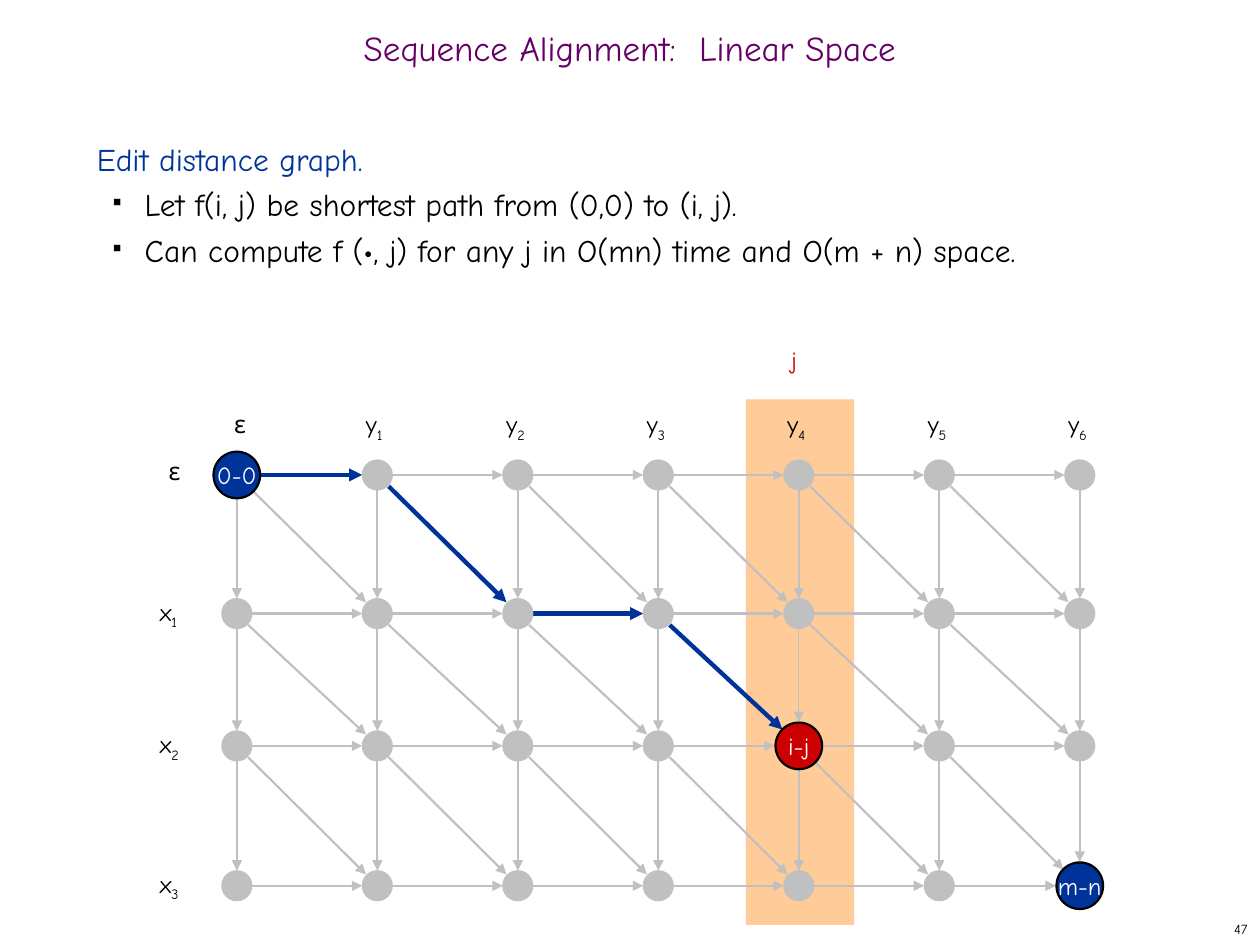
from lxml import etree
from pptx import Presentation
from pptx.dml.color import RGBColor
from pptx.enum import shapes, text
from pptx.oxml import ns
from pptx.util import Inches, Pt

COLORS = {"blue": "003399", "red": "CC0000", "gray": "C0C0C0", "band": "FFCC99",
          "purple": "660066", "black": "000000", "white": "FFFFFF"}
FONT = "Comic Neue"


def style(paragraph, size, color, alignment=text.PP_ALIGN.LEFT):
    paragraph.alignment = alignment
    paragraph.font.name = FONT
    paragraph.font.size = Pt(size)
    paragraph.font.color.rgb = RGBColor.from_string(COLORS[color])


def add_label(left, top, width, height, content, color="black", subscript=""):
    box = slide.shapes.add_textbox(Inches(left), Inches(top), Inches(width), Inches(height))
    box.text_frame.word_wrap = True
    paragraph = box.text_frame.paragraphs[0]
    paragraph.add_run().text = content
    if subscript:
        run = paragraph.add_run()
        run.text = subscript
        run.font._element.set("baseline", "-25000")
    style(paragraph, 14, color)


presentation = Presentation()
presentation.slide_width, presentation.slide_height = Inches(10), Inches(7.5)
slide = presentation.slides.add_slide(presentation.slide_layouts[5])

# Title
title = slide.shapes.title
title.left, title.top, title.width, title.height = Inches(0), Inches(0.17), Inches(10), Inches(0.5)
title.text_frame.text = "Sequence Alignment:  Linear Space"
title.text_frame.auto_size = text.MSO_AUTO_SIZE.NONE
title.text_frame.vertical_anchor = text.MSO_ANCHOR.MIDDLE
title.text_frame.paragraphs[0].line_spacing = 0.7
style(title.text_frame.paragraphs[0], 20, "purple", text.PP_ALIGN.CENTER)

# Highlighted column j
band = slide.shapes.add_shape(shapes.MSO_SHAPE.RECTANGLE, Inches(5.92), Inches(3.17),
                              Inches(0.86), Inches(4.17))
band.shadow.inherit = False
band.fill.solid()
band.fill.fore_color.rgb = RGBColor.from_string(COLORS["band"])
band.line.fill.background()

# Heading and bullets
body = slide.shapes.add_textbox(Inches(0.67), Inches(1), Inches(8.58), Inches(1.3))
body.text_frame.word_wrap = True
body.text_frame.text = ("Edit distance graph.\n"
                        "Let f(i, j) be shortest path from (0,0) to (i, j).\n"
                        "Can compute f (•, j) for any j in O(mn) time and O(m + n) space.")
for index, paragraph in enumerate(body.text_frame.paragraphs):
    if index > 0:
        paragraph.level = 1
        properties = paragraph._p.get_or_add_pPr()
        properties.set("marL", str(Inches(0.38)))
        properties.set("indent", str(Inches(-0.25)))
        bullet_color = etree.SubElement(properties, ns.qn("a:buClr"))
        etree.SubElement(bullet_color, ns.qn("a:srgbClr"), val=COLORS["black"])
        etree.SubElement(properties, ns.qn("a:buSzPct"), val="35000")
        etree.SubElement(properties, ns.qn("a:buChar"), char="■")
    paragraph.line_spacing = Pt(26)
    style(paragraph, 18, "black" if index else "blue")

# Grid of the graph: nodes are (row, column)
column_x = [1.88 + 1.115 * column for column in range(7)]
row_y = [3.77, 4.87, 5.92, 7.03]
nodes = [(row, column) for row in range(4) for column in range(7)]
named_nodes = {(0, 0): ("0-0", "blue"), (2, 4): ("i-j", "red"), (3, 6): ("m-n", "blue")}
shortest_path = [(0, 0), (0, 1), (1, 2), (1, 3), (2, 4)]
path_edges = list(zip(shortest_path, shortest_path[1:]))
thin_edges = [((2, 3), (2, 4)), ((1, 4), (2, 4))]

# Edges: right, down and diagonal from each node
for row, column in nodes:
    for down, right in ((0, 1), (1, 0), (1, 1)):
        start, end = (row, column), (row + down, column + right)
        if end not in nodes:
            continue
        small, large = (0.09, 0.13) if down and right else (0.12, 0.19)
        start_gap = large if start in named_nodes else small
        end_gap = large if end in named_nodes else small
        edge = slide.shapes.add_connector(
            shapes.MSO_CONNECTOR.STRAIGHT,
            Inches(column_x[column] + right * start_gap),
            Inches(row_y[row] + down * start_gap),
            Inches(column_x[end[1]] - right * end_gap),
            Inches(row_y[end[0]] - down * end_gap))
        on_path = (start, end) in path_edges
        edge.line.color.rgb = RGBColor.from_string(COLORS["blue" if on_path else "gray"])
        edge.line.width = Pt(2.5 if on_path else 0.75 if (start, end) in thin_edges else 1.25)
        etree.SubElement(edge.line._get_or_add_ln(), ns.qn("a:tailEnd"), type="triangle")
        etree.SubElement(edge._element.spPr, ns.qn("a:effectLst"))

# Nodes
for row, column in nodes:
    name, color = named_nodes.get((row, column), ("", "gray"))
    size = 0.37 if name else 0.23
    node = slide.shapes.add_shape(shapes.MSO_SHAPE.OVAL, Inches(column_x[column] - size / 2),
                                  Inches(row_y[row] - size / 2), Inches(size), Inches(size))
    node.shadow.inherit = False
    node.fill.solid()
    node.fill.fore_color.rgb = RGBColor.from_string(COLORS[color])
    node.line.color.rgb = RGBColor.from_string(COLORS["black" if name else "gray"])
    node.line.width = Pt(1.25)
    if name:
        node.text_frame.text = name
        node.text_frame.word_wrap = False
        node.text_frame.vertical_anchor = text.MSO_ANCHOR.MIDDLE
        style(node.text_frame.paragraphs[0], 14, "white", text.PP_ALIGN.CENTER)

# Row and column labels
add_label(1.24, 3.57, 0.45, 0.33, "ε")
add_label(1.76, 3.2, 0.45, 0.33, "ε")
for row in range(1, 4):
    add_label(1.17, row_y[row] - 0.18, 0.45, 0.37, "x", subscript=str(row))
for column in range(1, 7):
    add_label(column_x[column] - 0.19, 3.2, 0.45, 0.37, "y", subscript=str(column))
add_label(6.18, 2.69, 0.47, 0.37, "j", "red")

# Slide number
number = slide.shapes.add_textbox(Inches(7.92), Inches(7.25), Inches(2.08), Inches(0.25))
number.text_frame.word_wrap = True
number.text_frame.vertical_anchor = text.MSO_ANCHOR.MIDDLE
number.text_frame.text = "47"
style(number.text_frame.paragraphs[0], 8, "black", text.PP_ALIGN.RIGHT)

presentation.save("out.pptx")
